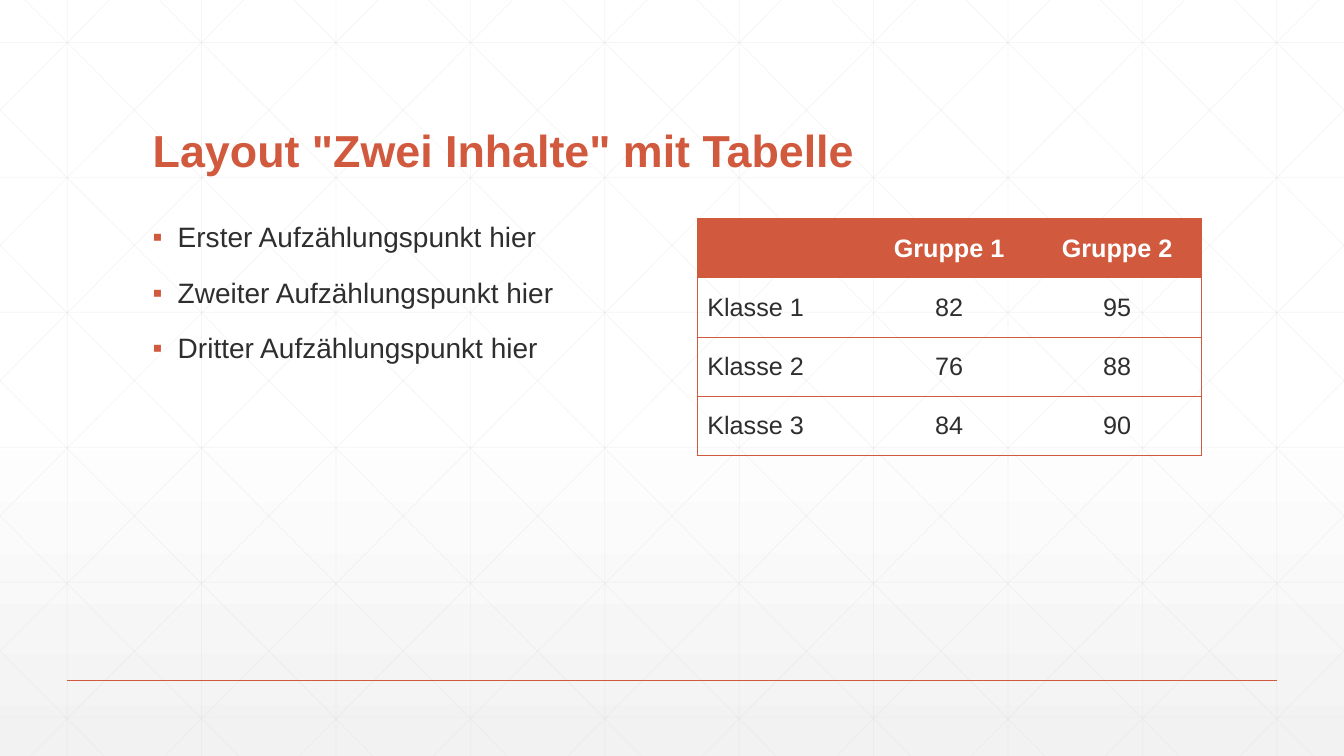
from copy import deepcopy

from lxml.etree import SubElement
from pptx import Presentation
from pptx.dml.color import RGBColor
from pptx.enum.shapes import MSO_CONNECTOR
from pptx.enum.text import MSO_ANCHOR, PP_ALIGN
from pptx.oxml.ns import qn
from pptx.util import Cm, Pt

# Content
TITLE = 'Layout "Zwei Inhalte" mit Tabelle'
BULLETS = [
    "Erster Aufzählungspunkt hier",
    "Zweiter Aufzählungspunkt hier",
    "Dritter Aufzählungspunkt hier",
]
TABLE_ROWS = [
    ("", "Gruppe 1", "Gruppe 2"),
    ("Klasse 1", "82", "95"),
    ("Klasse 2", "76", "88"),
    ("Klasse 3", "84", "90"),
]

# Colours and formats
ACCENT = RGBColor(0xD1, 0x5A, 0x3E)
DARK = RGBColor(0x2D, 0x2E, 0x2D)
WHITE = RGBColor(0xFF, 0xFF, 0xFF)
PALE = RGBColor(0xF2, 0xF2, 0xF2)
GRID = RGBColor(0xD9, 0xD9, 0xD9)
BACKGROUND_STOPS = [(0, WHITE), (0.53, WHITE), (1, PALE)]
TITLE_FONT = {"name": "Arial", "size": Pt(32), "bold": True}
BULLET_FONT = {"name": "Arial", "size": Pt(20), "bold": False}
HEADER_FONT = {"name": "Arial", "size": Pt(18), "bold": True}
CELL_FONT = {"name": "Arial", "size": Pt(18), "bold": False}
NO_STYLE = "{2D5ABB26-0587-4C30-8999-92F81FD0307C}"

# Measures in centimetres
WIDTH, HEIGHT = 33.87, 19.05
COLUMN_STEP, ROW_STEP = WIDTH / 10, 3.4
DIAGONAL_START, DIAGONAL_RUN = 0.63, 18.93
TEXT_LEFT, CONTENT_TOP = 3.6, 5.51
TABLE_LEFT, TABLE_WIDTH, TABLE_ROW = 17.57, 12.7, 1.49
INDENT = 0.63


def add_text(paragraph, text, font_format, color):
    run = paragraph.add_run()
    run.text = text
    for name, value in font_format.items():
        setattr(run.font, name, value)
    run.font.color.rgb = color


def add_line(shapes, start, end, color, width, opacity=None):
    connector = shapes.add_connector(
        MSO_CONNECTOR.STRAIGHT, *(Cm(value) for value in (*start, *end)))
    connector.line.color.rgb = color
    connector.line.width = Pt(width)
    properties = connector.element.spPr
    SubElement(properties, qn("a:effectLst"))
    if opacity:
        solid_color = properties.find(".//" + qn("a:srgbClr"))
        SubElement(solid_color, qn("a:alpha"), val=str(opacity * 1000))


def add_text_box(slide, top, height, anchor):
    box = slide.shapes.add_textbox(Cm(TEXT_LEFT), Cm(top), Cm(0), Cm(height))
    box.text_frame.word_wrap = True
    box.text_frame.vertical_anchor = anchor
    return box


def add_background(slide):
    fill = slide.background.fill
    fill.gradient()
    fill.gradient_angle = 270
    stop_list = slide.element.find(".//" + qn("a:gsLst"))
    stop_list.append(deepcopy(stop_list[0]))
    for stop, (position, color) in zip(fill.gradient_stops, BACKGROUND_STOPS):
        stop.position = position
        stop.color.rgb = color


def grid_lines():
    for column in range(10):
        x = COLUMN_STEP * (column + 0.5)
        yield (x, 0), (x, HEIGHT)
    for row in range(6):
        y = 1.07 + ROW_STEP * row
        yield (0, y), (WIDTH, y)
    # Diagonals are clipped to the slide, then mirrored
    slope = HEIGHT / DIAGONAL_RUN
    for step in range(-5, 10):
        x = DIAGONAL_START + COLUMN_STEP * step
        left, right = max(x, 0), min(x + DIAGONAL_RUN, WIDTH)
        top, bottom = (left - x) * slope, (right - x) * slope
        yield (left, top), (right, bottom)
        yield (WIDTH - left, top), (WIDTH - right, bottom)


def add_bullets(slide):
    box = add_text_box(slide, CONTENT_TOP, 10.59, MSO_ANCHOR.TOP)
    box.width = Cm(12.7)
    frame = box.text_frame
    for index, text in enumerate(BULLETS):
        paragraph = frame.add_paragraph() if index else frame.paragraphs[0]
        paragraph.line_spacing = 0.9
        paragraph.space_before = Pt(18)
        add_text(paragraph, text, BULLET_FONT, DARK)
        properties = paragraph._p.get_or_add_pPr()
        properties.set("marL", str(Cm(INDENT)))
        properties.set("indent", str(-Cm(INDENT)))
        bullet_color = SubElement(properties, qn("a:buClr"))
        SubElement(bullet_color, qn("a:srgbClr"), val=str(ACCENT))
        SubElement(properties, qn("a:buFont"), typeface="Arial")
        SubElement(properties, qn("a:buChar"), char="▪")


def set_borders(cell, sides):
    properties = cell._tc.get_or_add_tcPr()
    for position, side in enumerate(sides):
        border = properties.makeelement(qn("a:" + side), {"w": str(Pt(0.5))})
        fill = SubElement(border, qn("a:solidFill"))
        SubElement(fill, qn("a:srgbClr"), val=str(ACCENT))
        properties.insert(position, border)


def add_class_table(slide):
    row_count, column_count = len(TABLE_ROWS), len(TABLE_ROWS[0])
    frame = slide.shapes.add_table(
        row_count, column_count, Cm(TABLE_LEFT), Cm(CONTENT_TOP),
        Cm(TABLE_WIDTH), Cm(TABLE_ROW * row_count))
    frame.element.find(".//" + qn("a:tableStyleId")).text = NO_STYLE
    table = frame.table
    table.horz_banding = False
    for row, values in enumerate(TABLE_ROWS):
        for column, text in enumerate(values):
            cell = table.cell(row, column)
            cell.vertical_anchor = MSO_ANCHOR.MIDDLE
            paragraph = cell.text_frame.paragraphs[0]
            paragraph.alignment = PP_ALIGN.CENTER if column else PP_ALIGN.LEFT
            if row == 0:
                cell.fill.solid()
                cell.fill.fore_color.rgb = ACCENT
            else:
                cell.fill.background()
            if text:
                add_text(paragraph, text, CELL_FONT if row else HEADER_FONT,
                         DARK if row else WHITE)
            sides = ["lnL"] if column == 0 else []
            sides += ["lnR"] if column == column_count - 1 else []
            set_borders(cell, sides + ["lnT", "lnB"])


def main():
    presentation = Presentation()
    presentation.slide_width, presentation.slide_height = Cm(WIDTH), Cm(HEIGHT)
    slide = presentation.slides.add_slide(presentation.slide_layouts[6])

    # Background grid and footer rule
    add_background(slide)
    grid = slide.shapes.add_group_shape()
    for start, end in grid_lines():
        add_line(grid.shapes, start, end, GRID, 0.5, opacity=25)
    add_line(slide.shapes, (1.69, 17.15), (32.18, 17.15), ACCENT, 1)

    # Title
    title = add_text_box(slide, 1.4, 3.18, MSO_ANCHOR.BOTTOM)
    title.width = Cm(26.67)
    paragraph = title.text_frame.paragraphs[0]
    paragraph.line_spacing = 0.9
    add_text(paragraph, TITLE, TITLE_FONT, ACCENT)

    # Two contents
    add_bullets(slide)
    add_class_table(slide)
    presentation.save("out.pptx")


if __name__ == "__main__":
    main()
